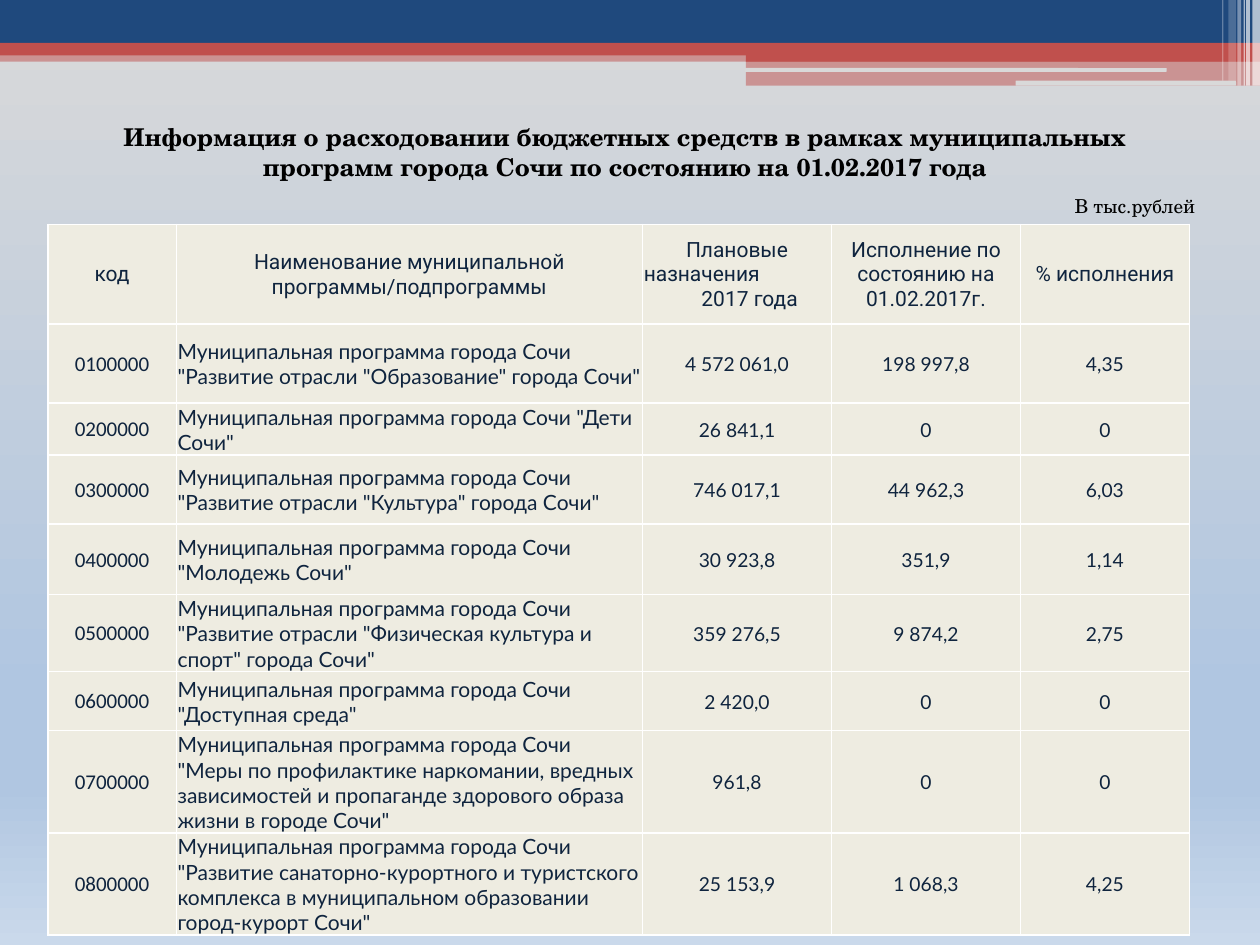
import pptx
import pptx.dml.color
import pptx.enum.shapes
import pptx.enum.text
import pptx.oxml
import pptx.oxml.ns
import pptx.util
import lxml.etree

Inches = pptx.util.Inches
Pt = pptx.util.Pt
RGB = pptx.dml.color.RGBColor.from_string
qn = pptx.oxml.ns.qn
Align = pptx.enum.text.PP_ALIGN
Anchor = pptx.enum.text.MSO_ANCHOR
Preset = pptx.enum.shapes.MSO_SHAPE

THEME = {
    "navy": "1F497D", "red": "C0504D", "white": "FFFFFF", "grey": "D9D9D9",
    "cell": "EEECE1", "ink": "0F243E", "black": "000000",
    "heading_font": "TeX Gyre Schola", "header_font": "Roboto",
    "code_font": "Calibri", "body_font": "Lato",
    "heading_size": 14, "text_size": 12, "small_size": 11,
    "sky": [(0, "D9D9D9"), (74, "B0C6E1"), (83, "B0C6E1"), (100, "CAD9EB")],
}

HEADING = ("Информация о расходовании бюджетных средств в рамках муниципальных "
           "программ города Сочи по состоянию на 01.02.2017 года")
UNIT = "В тыс.рублей"
HEADERS = [
    "код",
    "Наименование муниципальной программы/подпрограммы",
    "Плановые\nназначения\n2017 года",
    "Исполнение по состоянию на 01.02.2017г.",
    "% исполнения",
]
PREFIX = "Муниципальная программа города Сочи "
PROGRAMMES = [
    ("0100000", '"Развитие отрасли "Образование" города Сочи"', "4 572 061,0", "198 997,8", "4,35"),
    ("0200000", '"Дети Сочи"', "26 841,1", "0", "0"),
    ("0300000", '"Развитие отрасли "Культура" города Сочи"', "746 017,1", "44 962,3", "6,03"),
    ("0400000", '"Молодежь Сочи"', "30 923,8", "351,9", "1,14"),
    ("0500000", '"Развитие отрасли "Физическая культура и спорт" города Сочи"',
     "359 276,5", "9 874,2", "2,75"),
    ("0600000", '"Доступная среда"', "2 420,0", "0", "0"),
    ("0700000", '"Меры по профилактике наркомании, вредных зависимостей и пропаганде '
     'здорового образа жизни в городе Сочи"', "961,8", "0", "0"),
    ("0800000", '"Развитие санаторно-курортного и туристского комплекса в муниципальном '
     'образовании город-курорт Сочи"', "25 153,9", "1 068,3", "4,25"),
]
COLUMN_WIDTHS = [1.02, 3.7, 1.5, 1.5, 1.34]
ROW_HEIGHTS = [0.79, 0.63, 0.41, 0.55, 0.56, 0.56, 0.47, 0.65, 0.79]

BANDS = [
    (0, 0.4, 10, 0.09, "red", 50),
    (0, 0, 10, 0.34, "navy", 100),
    (0, 0.34, 10, 0.1, "red", 100),
    (5.92, 0.39, 4.08, 0.1, "red", 100),
    (5.92, 0.48, 4.08, 0.2, "red", 50),
]
SLOTS = [(5.91, 0.54, 3.35, 0.03, "grey", 100), (8.06, 0.64, 1.75, 0.04, "grey", 100)]
STRIPES = [
    (left, 0, width, height, "white", opacity)
    for left, width, height, opacity in [
        (9.94, 0.06, 0.68, 65), (9.89, 0.03, 0.68, 65), (9.87, 0.01, 0.68, 60),
        (9.82, 0.03, 0.68, 40), (9.75, 0.06, 0.64, 20), (9.7, 0.01, 0.64, 30),
    ]
]


def paint_sky(slide):
    slide.background.fill.gradient()
    gradient = next(slide.element.iter(qn("a:gradFill")))
    for part in list(gradient):
        gradient.remove(part)
    stops = lxml.etree.SubElement(gradient, qn("a:gsLst"))
    for percent, colour in THEME["sky"]:
        stop = lxml.etree.SubElement(stops, qn("a:gs"), pos=str(percent * 1000))
        lxml.etree.SubElement(stop, qn("a:srgbClr"), val=colour)
    lxml.etree.SubElement(gradient, qn("a:lin"), ang="5400000", scaled="0")


def add_bar(slide, preset, left, top, width, height, colour, opacity):
    bar = slide.shapes.add_shape(preset, *map(Inches, (left, top, width, height)))
    bar.shadow.inherit = False
    bar.line.fill.background()
    bar.fill.solid()
    bar.fill.fore_color.rgb = RGB(THEME[colour])
    if opacity < 100:
        tint = next(bar.element.spPr.iter(qn("a:srgbClr")))
        lxml.etree.SubElement(tint, qn("a:alpha"), val=str(opacity * 1000))


def format_text(paragraph, font, size, colour, align, bold=False):
    paragraph.alignment = align
    paragraph.font.name = THEME[font]
    paragraph.font.size = Pt(THEME[size])
    paragraph.font.color.rgb = RGB(THEME[colour])
    paragraph.font.bold = bold


def cell_style(row, column):
    if row == 0:
        return "header_font", "text_size", Align.CENTER
    if column == 0:
        return "code_font", "text_size", Align.CENTER
    if column == 1:
        return "body_font", "text_size", Align.LEFT
    return "body_font", "small_size", Align.CENTER


def add_programmes(slide):
    rows = [HEADERS] + [(code, PREFIX + name, *values) for code, name, *values in PROGRAMMES]
    table = slide.shapes.add_table(
        len(rows), len(HEADERS), Inches(0.38), Inches(1.78),
        Inches(sum(COLUMN_WIDTHS)), Inches(sum(ROW_HEIGHTS))).table
    table.horz_banding = False
    for column, width in zip(table.columns, COLUMN_WIDTHS):
        column.width = Inches(width)
    for row, height in zip(table.rows, ROW_HEIGHTS):
        row.height = Inches(height)
    for r, entries in enumerate(rows):
        for c, entry in enumerate(entries):
            cell = table.cell(r, c)
            cell.text = entry
            cell.fill.solid()
            cell.fill.fore_color.rgb = RGB(THEME["cell"])
            cell.vertical_anchor = Anchor.MIDDLE
            cell.margin_left = cell.margin_right = cell.margin_top = Inches(0.01)
            cell.margin_bottom = 0
            font, size, align = cell_style(r, c)
            for paragraph in cell.text_frame.paragraphs:
                format_text(paragraph, font, size, "ink", align)
    plan_lines = table.cell(0, 2).text_frame.paragraphs
    plan_lines[1].alignment = Align.LEFT
    plan_lines[2]._p.get_or_add_pPr().set("marL", str(Inches(0.2)))


def main():
    deck = pptx.Presentation()
    deck.slide_width, deck.slide_height = Inches(10), Inches(7.5)
    slide = deck.slides.add_slide(deck.slide_layouts[5])
    paint_sky(slide)
    for preset, bars in [(Preset.RECTANGLE, BANDS), (Preset.ROUNDED_RECTANGLE, SLOTS),
                         (Preset.RECTANGLE, STRIPES)]:
        for bar in bars:
            add_bar(slide, preset, *bar)
    add_programmes(slide)

    heading = slide.shapes.title
    heading.left, heading.top, heading.width, heading.height = map(Inches, (0.51, 0.92, 8.9, 0.57))
    heading.text_frame.text = HEADING
    heading.text_frame.auto_size = pptx.enum.text.MSO_AUTO_SIZE.NONE
    heading.text_frame.vertical_anchor = Anchor.TOP
    format_text(heading.text_frame.paragraphs[0], "heading_font", "heading_size", "black",
                Align.CENTER, bold=True)

    unit = slide.shapes.add_textbox(*map(Inches, (8.43, 1.49, 1.57, 0.29))).text_frame
    unit.word_wrap = True
    unit.text = UNIT
    format_text(unit.paragraphs[0], "heading_font", "small_size", "black", Align.LEFT)
    deck.save("out.pptx")


if __name__ == "__main__":
    main()
